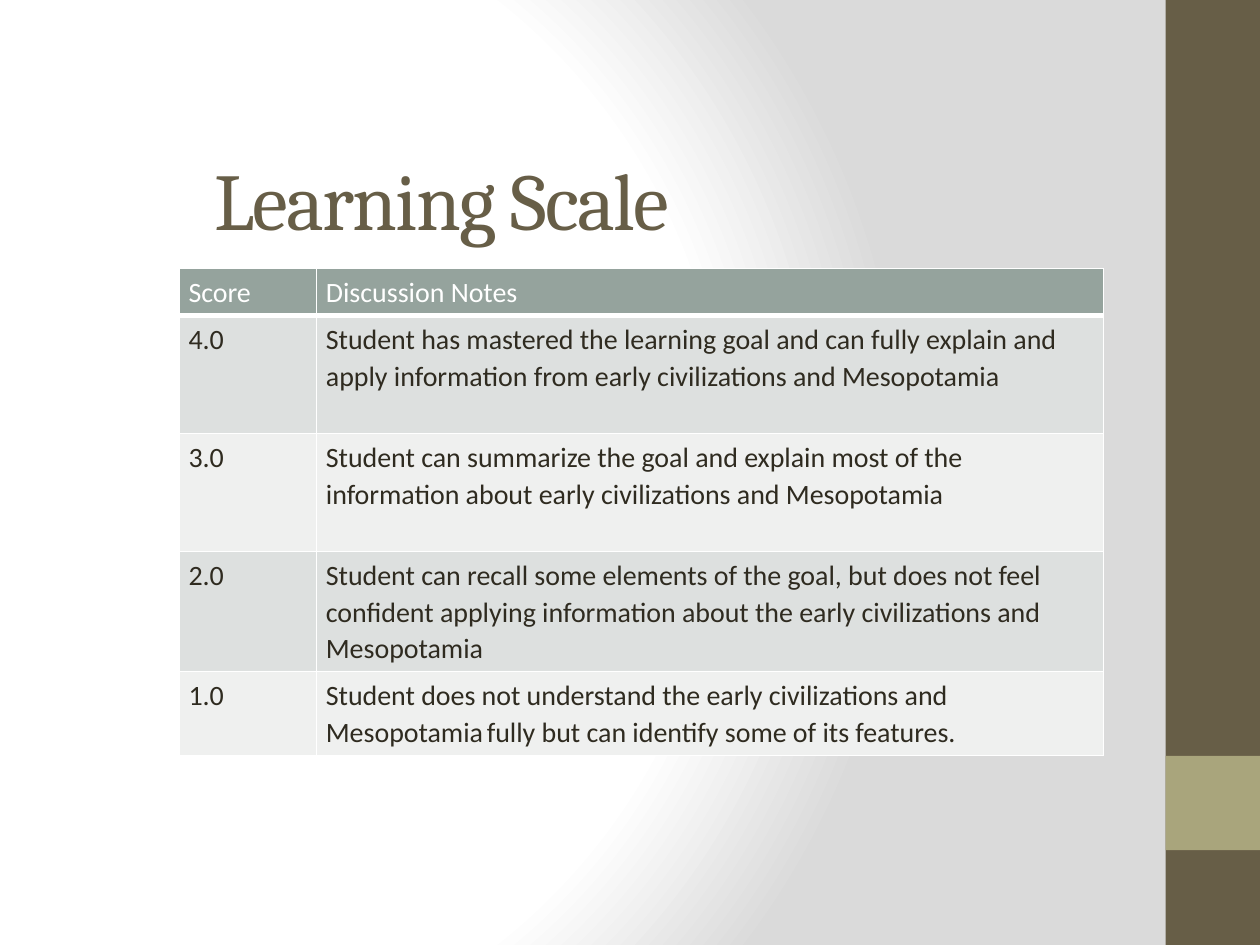
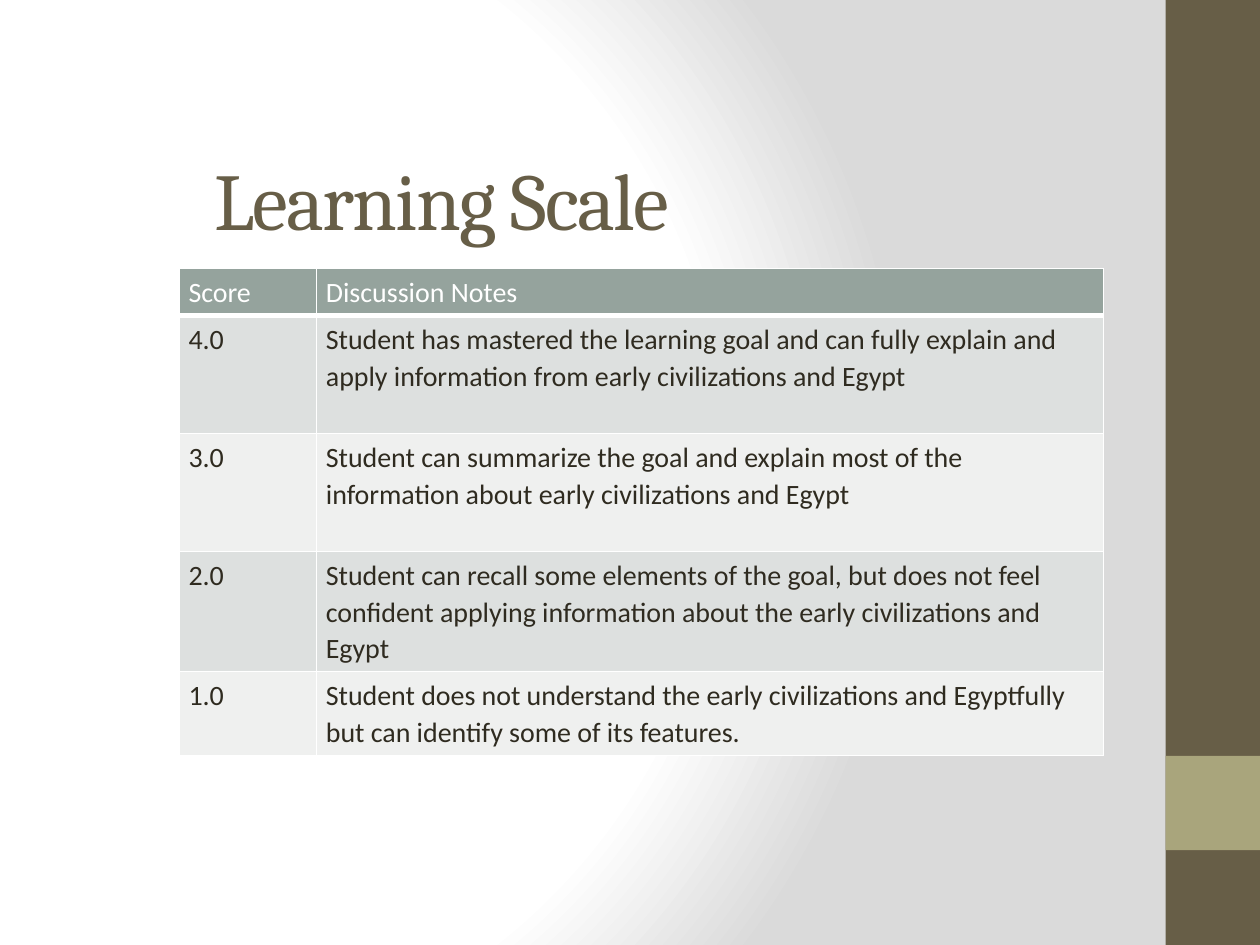
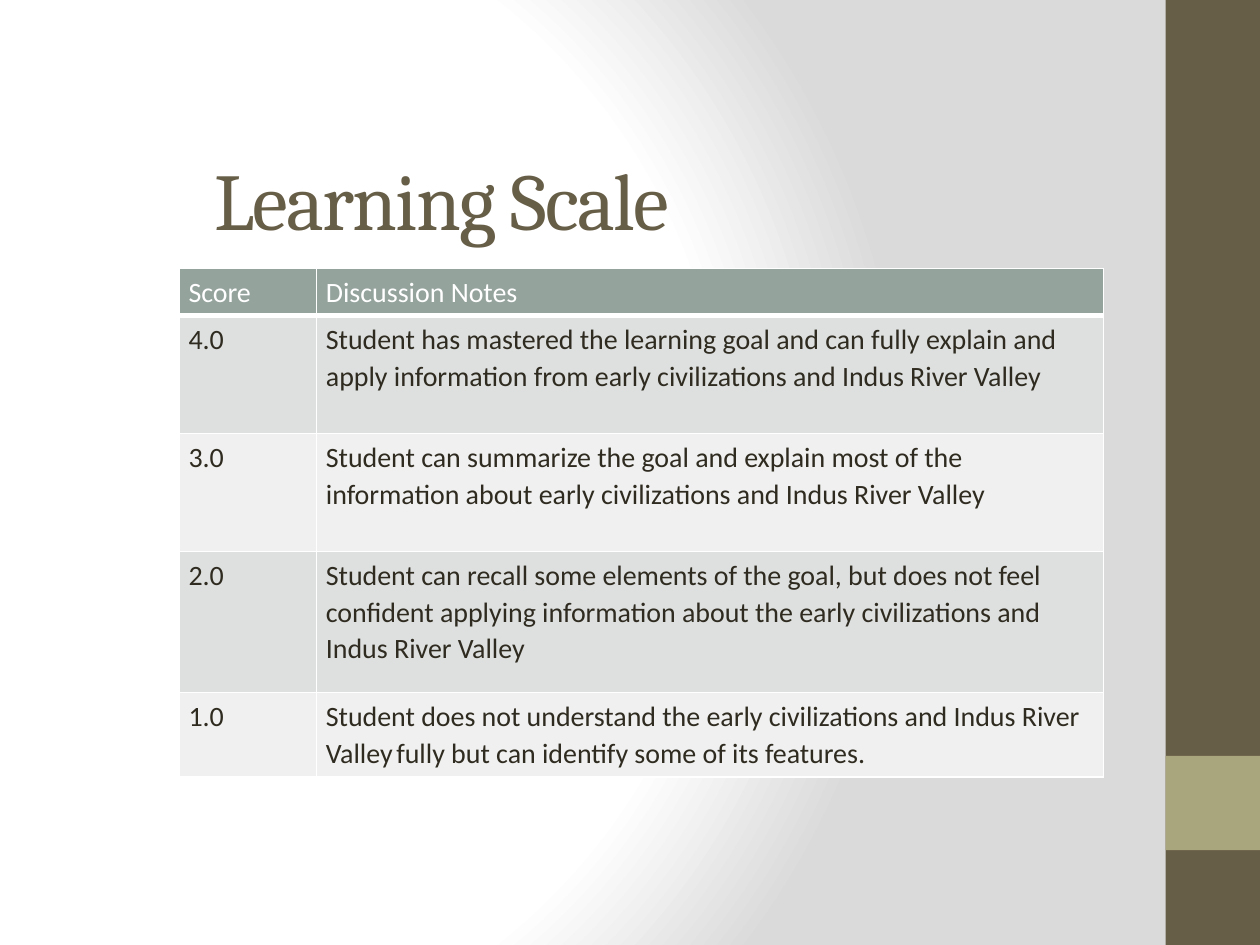
from lxml.etree import SubElement
from pptx import Presentation
from pptx.dml.color import RGBColor
from pptx.enum.shapes import MSO_SHAPE
from pptx.enum.text import MSO_ANCHOR, MSO_AUTO_SIZE, PP_ALIGN
from pptx.oxml import parse_xml
from pptx.oxml.ns import nsdecls, qn
from pptx.util import Cm, Pt

OLIVE, KHAKI, SAGE = "675E47", "A9A57C", "95A39D"
INK, WHITE, SILVER = "2F2B20", "FFFFFF", "DADADA"
ROW_TINTS = ["DDE0DF", "EFF0EF"]

TITLE_ONLY = 5
SLIDE_WIDTH, SLIDE_HEIGHT = 25.4, 19.05
BAND_LEFT, BAND_WIDTH = 23.5, 1.9
TABLE_LEFT, TABLE_TOP = 3.61, 5.41
COLUMN_WIDTHS = [2.77, 15.87]

# Topic, gap after the topic in the last row, height of the 2.0 row
TOPICS = [
    ("Mesopotamia", " ", 2.4),
    ("Egypt", "", 2.4),
    ("Indus River Valley", " ", 2.84),
]


def rgb(value):
    return RGBColor.from_string(value)


def learning_scale(topic, gap):
    """Return the table rows; each cell is a list of run texts."""
    return [
        [["Score"], ["Discussion Notes"]],
        [["4.0"], ["Student has mastered the learning goal and can fully explain and "
                   f"apply information from early civilizations and {topic}"]],
        [["3.0"], ["Student can summarize the goal and explain most of the "
                   f"information about early civilizations and {topic}"]],
        [["2.0"], ["Student can recall some elements of the goal, but does not feel "
                   "confident applying information about the early civilizations "
                   f"and {topic}"]],
        [["1.0"], [f"Student does not understand the early civilizations and {topic}",
                   gap, "fully but can identify some of its features."]],
    ]


class Deck:
    heading_font, body_font = "Cambria", "Calibri"
    heading_size, body_size, gap_size = Pt(46), Pt(16), Pt(9)

    def __init__(self):
        self.presentation = Presentation()
        self.presentation.slide_width = Cm(SLIDE_WIDTH)
        self.presentation.slide_height = Cm(SLIDE_HEIGHT)
        self.master = self.presentation.slide_master
        self.slide = None
        self.set_background()

    def set_background(self):
        self.master.background.fill.solid()
        background = self.master.element.find(".//" + qn("p:bgPr"))
        stops = "".join(
            f'<a:gs pos="{percent * 1000}"><a:srgbClr val="{color}"/></a:gs>'
            for percent, color in [(0, WHITE), (75, WHITE), (100, SILVER)])
        background.replace(background[0], parse_xml(
            f'<a:gradFill {nsdecls("a")} rotWithShape="1"><a:gsLst>{stops}</a:gsLst>'
            '<a:path path="circle"><a:fillToRect l="20000" t="50000" r="100000" '
            'b="50000"/></a:path></a:gradFill>'))

    def add_slide(self):
        slides = self.presentation.slides
        self.slide = slides.add_slide(self.presentation.slide_layouts[TITLE_ONLY])
        if len(slides) == 1:
            self.add_master_band(0, SLIDE_HEIGHT, OLIVE, 0)
            self.add_master_band(15.24, BAND_WIDTH, KHAKI, 1)

    def add_master_band(self, top, height, color, layer):
        """Draw a band on the current slide, then move it to the master."""
        band = self.slide.shapes.add_shape(
            MSO_SHAPE.RECTANGLE, Cm(BAND_LEFT), Cm(top), Cm(BAND_WIDTH), Cm(height))
        band.shadow.inherit = False
        band.fill.solid()
        band.fill.fore_color.rgb = rgb(color)
        band.line.fill.background()
        band.element.nvSpPr.cNvPr.id = 101 + layer
        self.master.shapes.element.insert(2 + layer, band.element)

    def add_title(self, text):
        title = self.slide.shapes.title
        title.left, title.top = Cm(4.06), Cm(2.82)
        title.width, title.height = Cm(19.69), Cm(2.34)
        frame = title.text_frame
        frame.text = text
        frame.auto_size = MSO_AUTO_SIZE.NONE
        frame.vertical_anchor = MSO_ANCHOR.MIDDLE
        heading = frame.paragraphs[0]
        heading.alignment = PP_ALIGN.LEFT
        run = heading.runs[0]
        self.format_run(run, self.heading_font, self.heading_size, OLIVE)
        run.font._element.set("spc", "-100")

    def add_table(self, rows, row_heights):
        table = self.slide.shapes.add_table(
            len(rows), len(COLUMN_WIDTHS), Cm(TABLE_LEFT), Cm(TABLE_TOP),
            Cm(sum(COLUMN_WIDTHS)), Cm(sum(row_heights))).table
        table.horz_banding = False
        for column, width in zip(table.columns, COLUMN_WIDTHS):
            column.width = Cm(width)
        for index, (texts, height) in enumerate(zip(rows, row_heights)):
            table.rows[index].height = Cm(height)
            is_header = index == 0
            fill = SAGE if is_header else ROW_TINTS[(index - 1) % 2]
            color = WHITE if is_header else INK
            for cell, run_texts in zip(table.rows[index].cells, texts):
                self.fill_cell(cell, run_texts, fill, color)
                self.add_borders(cell, top=3 if index == 1 else 1,
                                 bottom=3 if is_header else 1)

    def fill_cell(self, cell, run_texts, fill, color):
        cell.margin_left = cell.margin_right = Cm(0.19)
        cell.margin_top = cell.margin_bottom = Cm(0.1)
        cell.fill.solid()
        cell.fill.fore_color.rgb = rgb(fill)
        paragraph = cell.text_frame.paragraphs[0]
        paragraph.line_spacing = 1.07
        for text in filter(None, run_texts):
            run = paragraph.add_run()
            run.text = text
            size = self.gap_size if text == " " else self.body_size
            self.format_run(run, self.body_font, size, color)

    def add_borders(self, cell, top, bottom):
        properties = cell._tc.get_or_add_tcPr()
        sides = [("lnL", 1), ("lnR", 1), ("lnT", top), ("lnB", bottom)]
        for position, (side, points) in enumerate(sides):
            border = SubElement(properties, qn(f"a:{side}"), w=str(Pt(points)))
            paint = SubElement(border, qn("a:solidFill"))
            SubElement(paint, qn("a:srgbClr"), val=WHITE)
            properties.insert(position, border)

    def format_run(self, run, font_name, size, color):
        run.font.name = font_name
        run.font.size = size
        run.font.bold = False
        run.font.color.rgb = rgb(color)

    def save(self):
        self.presentation.save("out.pptx")


def main():
    deck = Deck()
    for topic, gap, recall_height in TOPICS:
        deck.add_slide()
        deck.add_title("Learning Scale")
        deck.add_table(learning_scale(topic, gap),
                       [0.95, 2.38, 2.38, recall_height, 1.7])
    deck.save()


if __name__ == "__main__":
    main()
